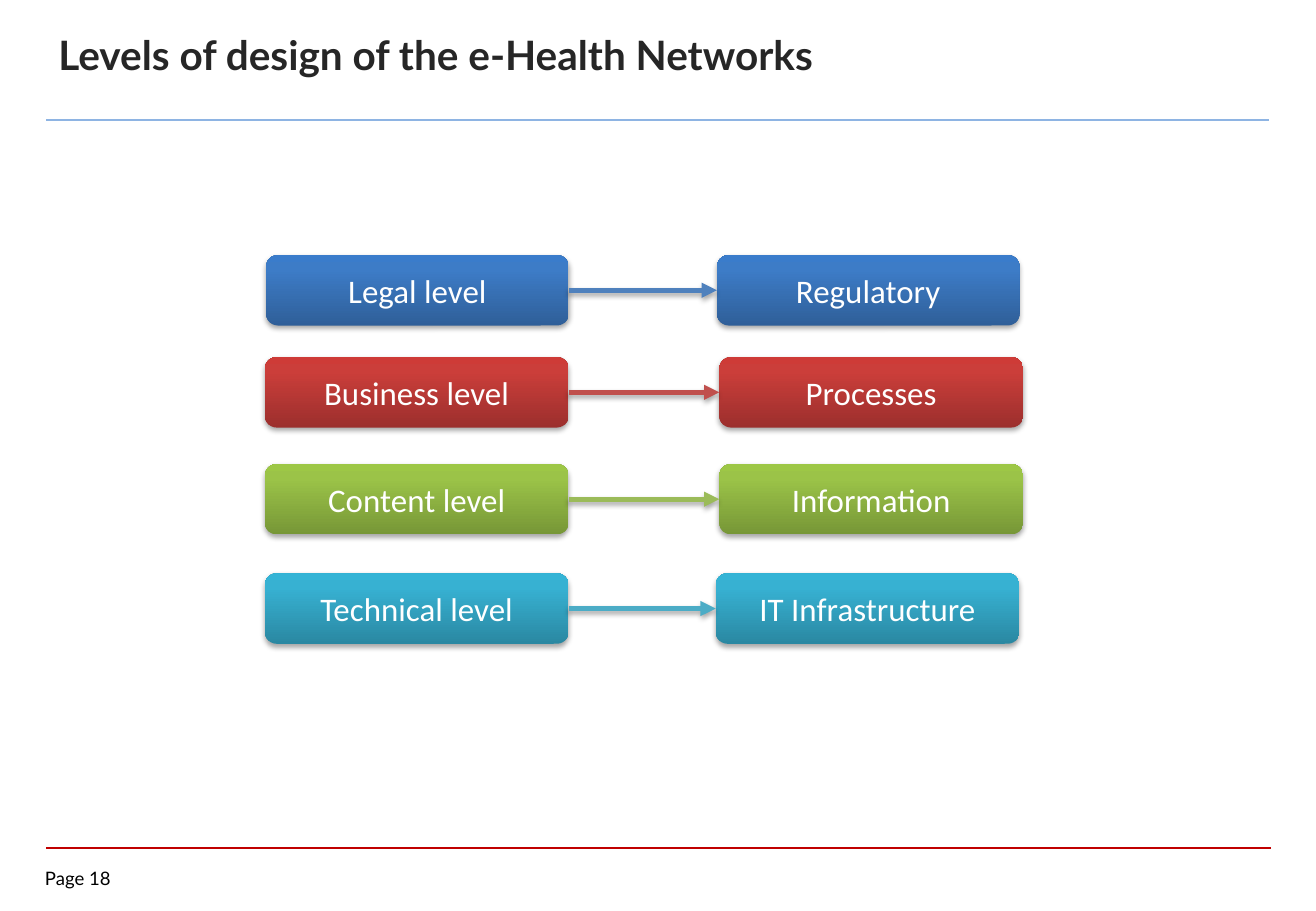
from copy import deepcopy
from dataclasses import dataclass

from pptx import Presentation
from pptx.dml.color import RGBColor
from pptx.enum.shapes import MSO_CONNECTOR as Connector, MSO_SHAPE as Preset
from pptx.enum.text import MSO_ANCHOR as Anchor, PP_ALIGN as Align
from pptx.oxml import parse_xml
from pptx.oxml.ns import nsdecls, qn
from pptx.shapes.autoshape import Shape
from pptx.shapes.connector import Connector as Line
from pptx.slide import Slide
from pptx.text.text import TextFrame
from pptx.util import Emu, Pt

EMU_PER_PX = 9144
BOX_HEIGHT = 58
LEFT_SITE, RIGHT_SITE = 1, 3

WHITE = RGBColor(0xFF, 0xFF, 0xFF)
BLACK = RGBColor(0x00, 0x00, 0x00)
TITLE_GREY = RGBColor(0x26, 0x26, 0x26)
RULE_BLUE = RGBColor(0x8E, 0xB4, 0xE3)
RULE_RED = RGBColor(0xC0, 0x00, 0x00)

BOX_FONT = {"name": "Calibri", "size": Pt(19.5)}
TITLE_FONT = {"name": "Lato", "size": Pt(24), "bold": True}
PAGE_FONT = {"name": "Lato", "size": Pt(11)}
NO_MARGINS = {f"margin_{side}": 0 for side in ("left", "top", "right", "bottom")}


@dataclass(frozen=True)
class Palette:
    bottom: RGBColor
    middle: RGBColor
    top: RGBColor
    arrow: RGBColor


@dataclass(frozen=True)
class Level:
    name: str
    subject: str
    top: int
    name_left: int
    subject_left: int
    width: int
    palette: Palette


@dataclass(frozen=True)
class Rule:
    top: int
    left: int
    right: int
    weight: float
    color: RGBColor


BLUE = Palette(RGBColor(0x2F, 0x5F, 0x99), RGBColor(0x3D, 0x7C, 0xC7),
               RGBColor(0x3A, 0x7C, 0xCB), RGBColor(0x4F, 0x81, 0xBD))
RED = Palette(RGBColor(0x9C, 0x2F, 0x2D), RGBColor(0xCB, 0x3E, 0x3A),
              RGBColor(0xCE, 0x3B, 0x37), RGBColor(0xC0, 0x50, 0x4D))
GREEN = Palette(RGBColor(0x77, 0x97, 0x37), RGBColor(0x9B, 0xC3, 0x48),
                RGBColor(0x9D, 0xC7, 0x46), RGBColor(0x9B, 0xBB, 0x59))
AQUA = Palette(RGBColor(0x2A, 0x88, 0xA2), RGBColor(0x37, 0xB1, 0xD2),
               RGBColor(0x34, 0xB4, 0xD6), RGBColor(0x4B, 0xAC, 0xC6))

LEVELS = (
    Level("Legal level", "Regulatory", 210, 219, 590, 249, BLUE),
    Level("Business level", "Processes", 294, 218, 592, 250, RED),
    Level("Content level", "Information", 382, 218, 592, 250, GREEN),
    Level("Technical level", "IT Infrastructure", 472, 218, 589, 250, AQUA),
)
RULES = (
    Rule(698, 38, 1046, 1, RULE_RED),
    Rule(99, 38, 1044, 1.5, RULE_BLUE),
)


def px(length: int) -> Emu:
    return Emu(length * EMU_PER_PX)


def write(frame: TextFrame, text: str, color: RGBColor, font: dict, align: Align) -> None:
    para = frame.paragraphs[0]
    para.alignment = align
    span = para.add_run()
    span.text = text
    for name, value in font.items():
        setattr(span.font, name, value)
    span.font.color.rgb = color


def set_effects(item: Shape | Line, shadow: bool) -> None:
    effects = parse_xml(f"<a:effectLst {nsdecls('a')}/>")
    if shadow:
        effects.append(parse_xml(
            f'<a:outerShdw {nsdecls("a")} blurRad="40000" dist="23000" dir="5400000" '
            'rotWithShape="0"><a:srgbClr val="000000"><a:alpha val="35000"/>'
            '</a:srgbClr></a:outerShdw>'))
    item._element.spPr.append(effects)


def fill_gradient(box: Shape, palette: Palette) -> None:
    box.fill.gradient()
    box.fill.gradient_angle = 90
    stop_list = box._element.spPr.find(f".//{qn('a:gsLst')}")
    stop_list.append(deepcopy(stop_list[-1]))
    stops = ((0, palette.bottom), (0.8, palette.middle), (1, palette.top))
    for stop, (position, color) in zip(box.fill.gradient_stops, stops):
        stop.position = position
        stop.color.rgb = color


def add_box(page: Slide, text: str, left: int, level: Level) -> Shape:
    box = page.shapes.add_shape(Preset.ROUNDED_RECTANGLE, px(left), px(level.top),
                                px(level.width), px(BOX_HEIGHT))
    fill_gradient(box, level.palette)
    box.line.fill.background()
    set_effects(box, shadow=True)
    box.text_frame.vertical_anchor = Anchor.MIDDLE
    write(box.text_frame, text, WHITE, BOX_FONT, Align.CENTER)
    return box


def add_arrow(page: Slide, start: Shape, end: Shape, color: RGBColor) -> None:
    arrow = page.shapes.add_connector(Connector.STRAIGHT, 0, 0, 0, 0)
    arrow.begin_connect(start, RIGHT_SITE)
    arrow.end_connect(end, LEFT_SITE)
    arrow.line.color.rgb = color
    arrow.line.width = Pt(3)
    arrow.line._get_or_add_ln().append(
        parse_xml(f'<a:tailEnd {nsdecls("a")} type="triangle"/>'))
    set_effects(arrow, shadow=True)


def add_rule(page: Slide, rule: Rule) -> None:
    line = page.shapes.add_connector(Connector.STRAIGHT, px(rule.left), px(rule.top),
                                     px(rule.right), px(rule.top))
    line.line.color.rgb = rule.color
    line.line.width = Pt(rule.weight)
    set_effects(line, shadow=False)


def set_title(page: Slide) -> None:
    title = page.shapes.title
    place = {"left": 38, "top": 9, "width": 992, "height": 71}
    for name, value in place.items():
        setattr(title, name, px(value))
    title.text_frame.vertical_anchor = Anchor.MIDDLE
    write(title.text_frame, "Levels of design of the e-Health Networks",
          TITLE_GREY, TITLE_FONT, Align.LEFT)


def add_page_number(page: Slide) -> None:
    box = page.shapes.add_textbox(px(37), px(714), px(73), px(22))
    for name, value in NO_MARGINS.items():
        setattr(box.text_frame, name, value)
    write(box.text_frame, "Page 18", BLACK, PAGE_FONT, Align.LEFT)


def main() -> None:
    deck = Presentation()
    deck.slide_width, deck.slide_height = px(1083), px(750)
    page = deck.slides.add_slide(deck.slide_layouts.get_by_name("Title Only"))
    for rule in RULES:
        add_rule(page, rule)
    add_page_number(page)
    set_title(page)
    for level in LEVELS:
        name_box = add_box(page, level.name, level.name_left, level)
        subject_box = add_box(page, level.subject, level.subject_left, level)
        add_arrow(page, name_box, subject_box, level.palette.arrow)
    deck.save("out.pptx")


if __name__ == "__main__":
    main()
